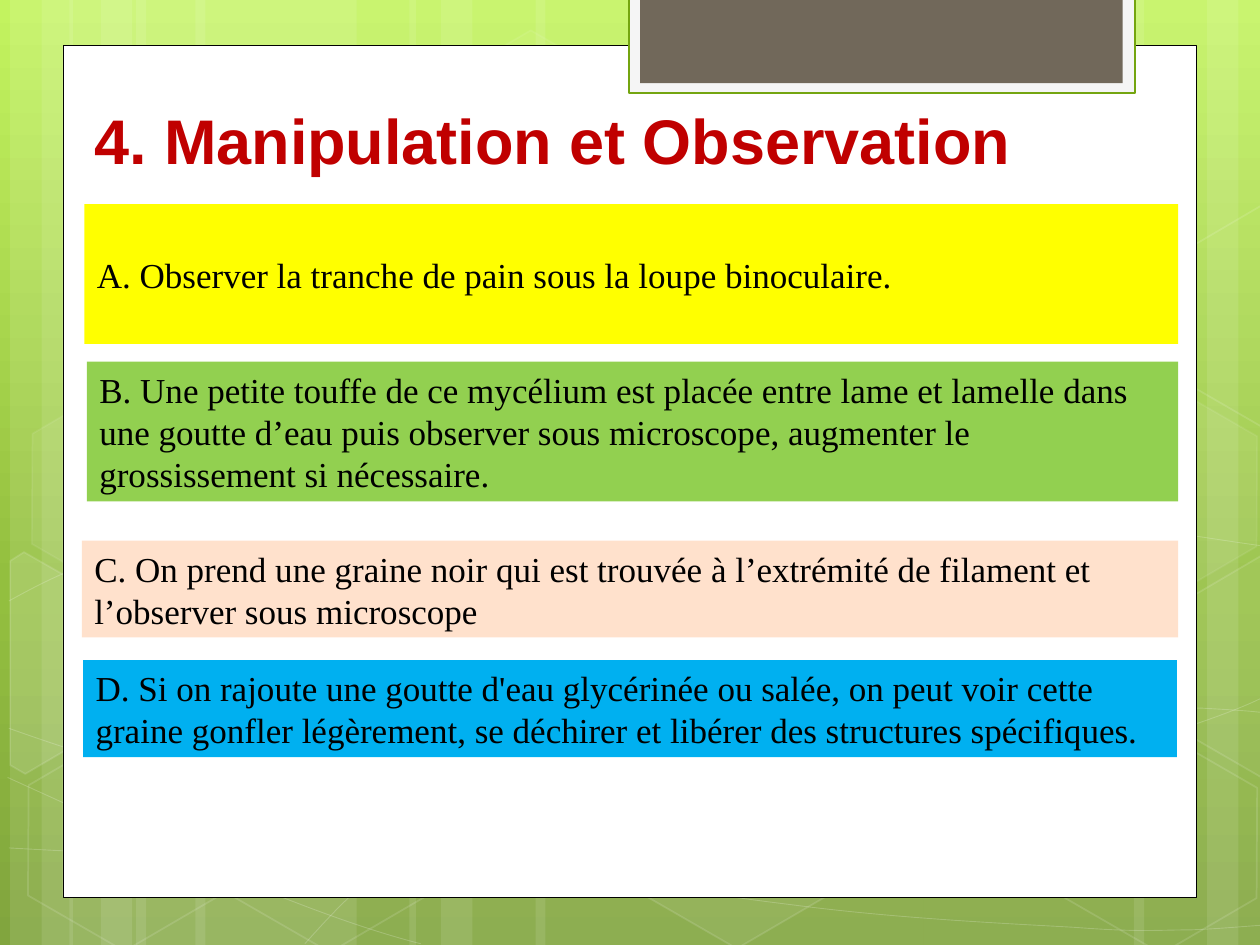
from copy import deepcopy
from dataclasses import dataclass
from math import cos, radians, sin

from lxml.etree import SubElement
from pptx import Presentation
from pptx.dml.color import RGBColor
from pptx.enum.shapes import MSO_SHAPE
from pptx.enum.text import MSO_ANCHOR, PP_ALIGN
from pptx.oxml.ns import qn
from pptx.util import Inches, Pt


@dataclass(frozen=True)
class Theme:
    gradient: tuple = ((0, "C3F35F"), (0.62, "93BF3F"), (1, "81A53E"))
    white: str = "FFFFFF"
    black: str = "000000"
    tab_outer: str = "F5F5F5"
    tab_inner: str = "71685A"
    tab_line: str = "74A510"
    title_color: str = "C00000"
    title_font: str = "Arial"
    title_size: int = 36
    body_font: str = "Times New Roman"
    body_size: int = 20


THEME = Theme()
TILT = 30  # degrees, for every hexagon

# Light vertical bands: left, width
BANDS = [
    (1.08, 1.75), (0.08, 0.5), (0.33, 0.83), (1.55, 1.75), (0.55, 0.5), (0.8, 0.83),
    (7.33, 1.75), (9.58, 0.5), (9, 0.83), (4.25, 3.08), (3.25, 0.5), (3.5, 0.83),
]

# Thin curves: a start point, then Bezier segments (two controls and an end);
# the second value is the index of a point reached by a straight line
CURVES = [
    ([(0.07, 6.73), (0.61, 6.76), (1.15, 6.79), (1.9, 6.78), (2.65, 6.77), (3.58, 6.75),
      (4.58, 6.65), (5.58, 6.55), (7, 6.36), (7.92, 6.17), (8.83, 5.98), (9.77, 5.68),
      (10.07, 5.51)], None),
    ([(0.07, 4.77), (0.36, 4.61), (0.65, 4.46), (1.21, 4.31), (1.78, 4.16), (2.59, 3.94),
      (3.47, 3.87), (4.36, 3.8), (5.44, 3.79), (6.54, 3.87), (7.64, 3.95), (9.47, 4.26),
      (10.07, 4.34)], None),
    ([(0.06, 6.17), (1.27, 6.72), (2.47, 7.27), (3.34, 7.49)], None),
    ([(0.07, 5.78), (0.38, 5.89), (0.7, 6), (1.28, 6.16), (1.86, 6.31), (2.73, 6.56),
      (3.57, 6.73), (4.4, 6.9), (5.45, 7.08), (6.28, 7.18), (7.11, 7.29), (8, 7.33),
      (8.53, 7.36), (9.05, 7.4), (9.19, 7.38), (9.45, 7.38), (9.71, 7.37), (9.89, 7.35),
      (10.07, 7.34)], None),
    ([(2.42, 7.49), (2.6, 7.29), (2.78, 7.09), (3.02, 6.91), (3.26, 6.73), (3.6, 6.53),
      (3.88, 6.39), (4.16, 6.25), (4.33, 6.19), (4.7, 6.09), (5.06, 5.99), (5.73, 5.85),
      (6.08, 5.78), (6.44, 5.71), (6.49, 5.71), (6.8, 5.69), (7.11, 5.66), (7.6, 5.63),
      (7.94, 5.62), (8.29, 5.61), (8.86, 5.62), (8.86, 5.62), (9.53, 5.62), (9.71, 5.63),
      (9.88, 5.64), (9.97, 5.65), (10.06, 5.66), (10.03, 5.65), (10.06, 5.66)], 22),
]

# Hexagons: left, top, fill opacity (None for no fill), line opacity
HEXAGONS = [
    (3.34, 0.36, 4, 8), (4.97, 5.89, 6, 12), (0.11, 5.91, None, 12),
    (0.14, 3.12, 7, 8), (1.74, 5.92, None, 12), (7.53, 4.53, 10, 12),
    (8.34, 5.93, None, 12), (8.34, 3.14, 7, 8),
]

# Hexagons cut by the slide edge: corners as seen, centre, fill opacity
CUT_HEXAGONS = [
    ([(0.08, 4.45), (0.19, 4.38), (0.96, 4.82), (0.95, 5.7), (0.2, 6.14), (0.08, 6.07)],
     (0.36, 5.35), 10),
    ([(9.26, 4.85), (10.01, 4.41), (10.09, 4.46), (10.09, 6.13), (10.02, 6.17),
      (9.26, 5.73)], (9.85, 5.2), 4),
    ([(9.26, 2.07), (10.01, 1.63), (10.1, 1.68), (10.09, 3.35), (10.02, 3.39),
      (9.26, 2.95)], (9.85, 2.41), None),
]

# Steps: left, top, width, height, fill, text
STEPS = [
    (0.67, 1.62, 8.68, 1.11, "FFFF00",
     "A. Observer la tranche de pain sous la loupe binoculaire."),
    (0.69, 2.87, 8.66, 1.11, "92D050",
     "B. Une petite touffe de ce mycélium est placée entre lame et lamelle dans une goutte "
     "d’eau puis observer sous microscope, augmenter le grossissement si nécessaire."),
    (0.65, 4.29, 8.7, 0.77, "FFE1CC",
     "C. On prend une graine noir qui est trouvée à l’extrémité de filament et l’observer "
     "sous microscope"),
    (0.66, 5.24, 8.68, 0.77, "00B0F0",
     "D. Si on rajoute une goutte d'eau glycérinée ou salée, on peut voir cette graine "
     "gonfler légèrement, se déchirer et libérer des structures spécifiques."),
]


def paint(fill, color):
    if color is None:
        fill.background()
        return
    fill.solid()
    fill.fore_color.rgb = RGBColor.from_string(color)


def set_opacity(parent, opacity):
    color = parent.find(qn("a:solidFill") + "/" + qn("a:srgbClr"))
    if color is not None and opacity < 100:
        SubElement(color, qn("a:alpha")).set("val", str(opacity * 1000))


def style(shape, fill=None, opacity=100, line=None, line_width=1, line_opacity=100):
    shape.shadow.inherit = False
    paint(shape.fill, fill if opacity else None)
    set_opacity(shape.element.spPr, opacity or 100)
    paint(shape.line.fill, line)
    if line:
        shape.line.width = Pt(line_width)
        set_opacity(shape.element.spPr.find(qn("a:ln")), line_opacity)


def add_box(slide, left, top, width, height, kind=MSO_SHAPE.RECTANGLE, **look):
    shape = slide.shapes.add_shape(
        kind, Inches(left), Inches(top), Inches(width), Inches(height))
    style(shape, **look)
    return shape


def add_outline(slide, points, close, **look):
    corners = [(Inches(x), Inches(y)) for x, y in points]
    builder = slide.shapes.build_freeform(*corners[0])
    builder.add_line_segments(corners[1:], close=close)
    shape = builder.convert_to_shape()
    style(shape, **look)
    return shape


def add_curve(slide, points, straight_index, **look):
    """Draw the points as an outline, then join each three into a Bezier segment."""
    shape = add_outline(slide, points, False, **look)
    outline = shape.element.find(".//" + qn("a:path"))
    lines = outline.findall(qn("a:lnTo"))
    position = 0
    while position < len(lines):
        if position + 1 == straight_index:
            outline.append(lines[position])
            position += 1
            continue
        segment = SubElement(outline, qn("a:cubicBezTo"))
        for line in lines[position:position + 3]:
            segment.append(line[0])
            outline.remove(line)
        position += 3


def turn_back(points, center):
    """Undo the tilt, so that the shape's rotation restores the corners."""
    cosine, sine = cos(radians(TILT)), sin(radians(TILT))
    offsets = [(x - center[0], y - center[1]) for x, y in points]
    return [(center[0] + x * cosine + y * sine, center[1] - x * sine + y * cosine)
            for x, y in offsets]


def write(shape, text, font, size, color, bold=False):
    frame = shape.text_frame
    frame.word_wrap = True
    frame.vertical_anchor = MSO_ANCHOR.MIDDLE
    paragraph = frame.paragraphs[0]
    paragraph.text = text
    paragraph.alignment = PP_ALIGN.LEFT
    paragraph.font.name = font
    paragraph.font.size = Pt(size)
    paragraph.font.bold = bold
    paragraph.font.color.rgb = RGBColor.from_string(color)


def set_background(slide):
    fill = slide.background.fill
    fill.gradient()
    fill.gradient_angle = 270
    stop_list = slide.element.find(".//" + qn("a:gsLst"))
    stop_list.append(deepcopy(stop_list[-1]))
    for stop, (position, color) in zip(fill.gradient_stops, THEME.gradient):
        stop.position = position
        stop.color.rgb = RGBColor.from_string(color)


def add_decoration(slide):
    white = THEME.white
    for left, width in BANDS:
        add_box(slide, left, 0, width, 7.5, fill=white, opacity=10)
    for points, straight_index in CURVES:
        add_curve(slide, points, straight_index, line=white, line_width=0.5, line_opacity=20)
    for left, top, opacity, line_opacity in HEXAGONS:
        hexagon = add_box(slide, left, top, 1.75, 1.52, MSO_SHAPE.HEXAGON, fill=white,
                          opacity=opacity, line=white, line_opacity=line_opacity)
        hexagon.adjustments[0] = 0.285
        hexagon.rotation = TILT
    for corners, center, opacity in CUT_HEXAGONS:
        hexagon = add_outline(slide, turn_back(corners, center), True, fill=white,
                              opacity=opacity, line=white, line_opacity=12)
        hexagon.rotation = TILT


def main():
    presentation = Presentation()
    presentation.slide_width, presentation.slide_height = Inches(10), Inches(7.5)
    slide = presentation.slides.add_slide(presentation.slide_layouts[6])
    set_background(slide)
    add_decoration(slide)
    # White page and the tab at its top
    add_box(slide, 0.5, 0.36, 9, 6.76, fill=THEME.white, line=THEME.black, line_width=0.5)
    add_box(slide, 4.99, -0.02, 4.02, 0.76, fill=THEME.tab_outer,
            line=THEME.tab_line, line_width=1.25)
    add_box(slide, 5.08, -0.02, 3.83, 0.68, fill=THEME.tab_inner)
    # Title and steps
    title = slide.shapes.add_textbox(Inches(0.65), Inches(0.75), Inches(7.5), Inches(0.71))
    write(title, "4. Manipulation et Observation", THEME.title_font, THEME.title_size,
          THEME.title_color, bold=True)
    for left, top, width, height, color, text in STEPS:
        step = add_box(slide, left, top, width, height, fill=color)
        write(step, text, THEME.body_font, THEME.body_size, THEME.black)
    presentation.save("out.pptx")


if __name__ == "__main__":
    main()
